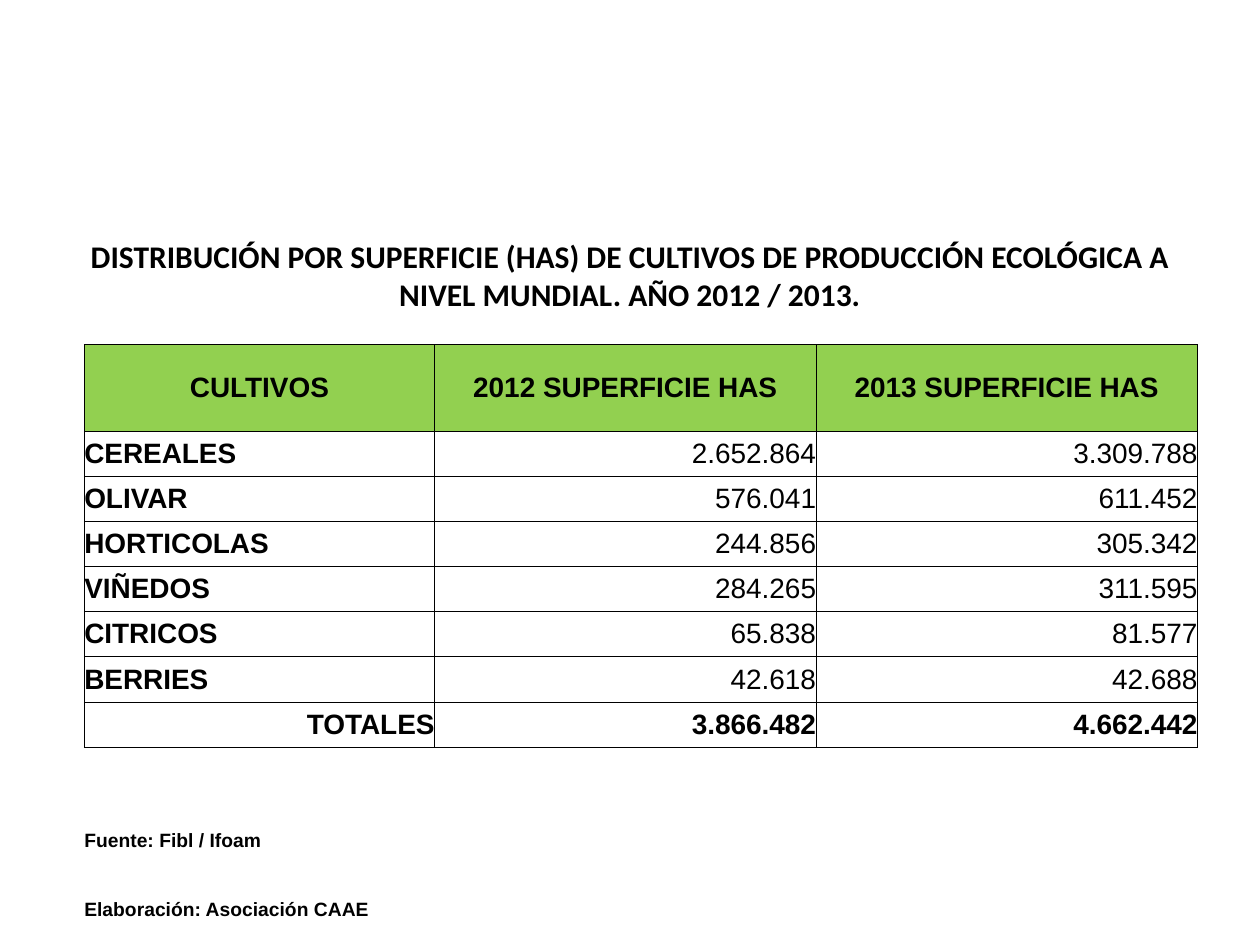
from lxml import etree
from pptx import Presentation
from pptx.dml.color import RGBColor
from pptx.enum.text import MSO_ANCHOR, PP_ALIGN
from pptx.oxml.ns import qn
from pptx.util import Cm, Pt

LEFT, CENTER, RIGHT = PP_ALIGN.LEFT, PP_ALIGN.CENTER, PP_ALIGN.RIGHT
TOP, MIDDLE, BOTTOM = MSO_ANCHOR.TOP, MSO_ANCHOR.MIDDLE, MSO_ANCHOR.BOTTOM

COLORS = {"text": "000000", "border": "000000", "header": "92D050"}

TITLE = ("DISTRIBUCIÓN POR SUPERFICIE (HAS) DE CULTIVOS DE PRODUCCIÓN "
         "ECOLÓGICA A NIVEL MUNDIAL. AÑO 2012 / 2013.")
HEADINGS = ("CULTIVOS", "2012 SUPERFICIE HAS", "2013 SUPERFICIE HAS")
CROPS = [
    ("CEREALES", "2.652.864", "3.309.788"),
    ("OLIVAR", "576.041", "611.452"),
    ("HORTICOLAS", "244.856", "305.342"),
    ("VIÑEDOS", "284.265", "311.595"),
    ("CITRICOS", "65.838", "81.577"),
    ("BERRIES", "42.618", "42.688"),
]
TOTALS = ("TOTALES", "3.866.482", "4.662.442")
SOURCE = "Fuente: Fibl / Ifoam"
AUTHOR = "Elaboración: Asociación CAAE"

COLUMN_WIDTHS = (7.06, 7.69, 7.69)
ROW_HEIGHTS = [1.74] + [0.91] * 7 + [0.84] * 2 + [0.91] * 2


class SlideBuilder:
    def __init__(self, slide):
        self.slide = slide

    def set_text(self, frame, text, size, font="Arial", bold=True, align=LEFT):
        frame.text = text
        paragraph = frame.paragraphs[0]
        paragraph.alignment = align
        for run in paragraph.runs:
            run.font.name = font
            run.font.size = Pt(size)
            run.font.bold = bold
            run.font.color.rgb = RGBColor.from_string(COLORS["text"])

    def title(self, text, left, top, width, height):
        box = self.slide.shapes.add_textbox(Cm(left), Cm(top), Cm(width), Cm(height))
        frame = box.text_frame
        frame.word_wrap = True
        frame.vertical_anchor = MIDDLE
        self.set_text(frame, text, 18, font="Calibri", align=CENTER)

    def table(self, left, top, widths, heights):
        frame = self.slide.shapes.add_table(
            len(heights), len(widths), Cm(left), Cm(top),
            Cm(sum(widths)), Cm(sum(heights)))
        table = frame.table
        table.first_row = table.horz_banding = False
        for column, width in zip(table.columns, widths):
            column.width = Cm(width)
        for row, height in zip(table.rows, heights):
            row.height = Cm(height)
        return table

    def cell(self, cell, text="", size=16, bold=True, align=LEFT,
             anchor=MIDDLE, fill=None, borders=""):
        cell.margin_left = cell.margin_right = 0
        cell.margin_top = cell.margin_bottom = 0
        cell.vertical_anchor = anchor
        self.borders(cell, borders)
        if fill:
            cell.fill.solid()
            cell.fill.fore_color.rgb = RGBColor.from_string(COLORS[fill])
        else:
            cell.fill.background()
        if text:
            self.set_text(cell.text_frame, text, size, bold=bold, align=align)

    def borders(self, cell, visible):
        properties = cell._tc.get_or_add_tcPr()
        for side in "LRTB":
            line = etree.SubElement(properties, qn(f"a:ln{side}"), w=str(Pt(0.5)))
            if side in visible:
                solid = etree.SubElement(line, qn("a:solidFill"))
                etree.SubElement(solid, qn("a:srgbClr"), val=COLORS["border"])
            else:
                etree.SubElement(line, qn("a:noFill"))


def main():
    presentation = Presentation()
    presentation.slide_width, presentation.slide_height = Cm(25.4), Cm(19.05)
    builder = SlideBuilder(
        presentation.slides.add_slide(presentation.slide_layouts[6]))

    builder.title(TITLE, 1.27, 3.96, 22.86, 3.18)
    table = builder.table(1.7, 6.95, COLUMN_WIDTHS, ROW_HEIGHTS)

    # Header, crops and totals
    for r, values in enumerate([HEADINGS, *CROPS, TOTALS]):
        header, total = values is HEADINGS, values is TOTALS
        for c, value in enumerate(values):
            align = CENTER if header else RIGHT if c or total else LEFT
            builder.cell(table.cell(r, c), value, align=align,
                         bold=header or total or c == 0,
                         fill="header" if header else None, borders="LRTB")

    # Borderless rows with the source and the author
    first_note, source_row, author_row = len(CROPS) + 2, 10, 11
    notes = {(source_row, 0): (SOURCE, TOP), (author_row, 0): (AUTHOR, BOTTOM)}
    for r in range(first_note, len(ROW_HEIGHTS)):
        for c in range(len(COLUMN_WIDTHS)):
            text, anchor = notes.get((r, c), ("", TOP))
            builder.cell(table.cell(r, c), text, size=11, anchor=anchor,
                         borders="T" if r == first_note else "")
    table.cell(author_row, 0).merge(table.cell(author_row, 1))

    presentation.save("out.pptx")


if __name__ == "__main__":
    main()
